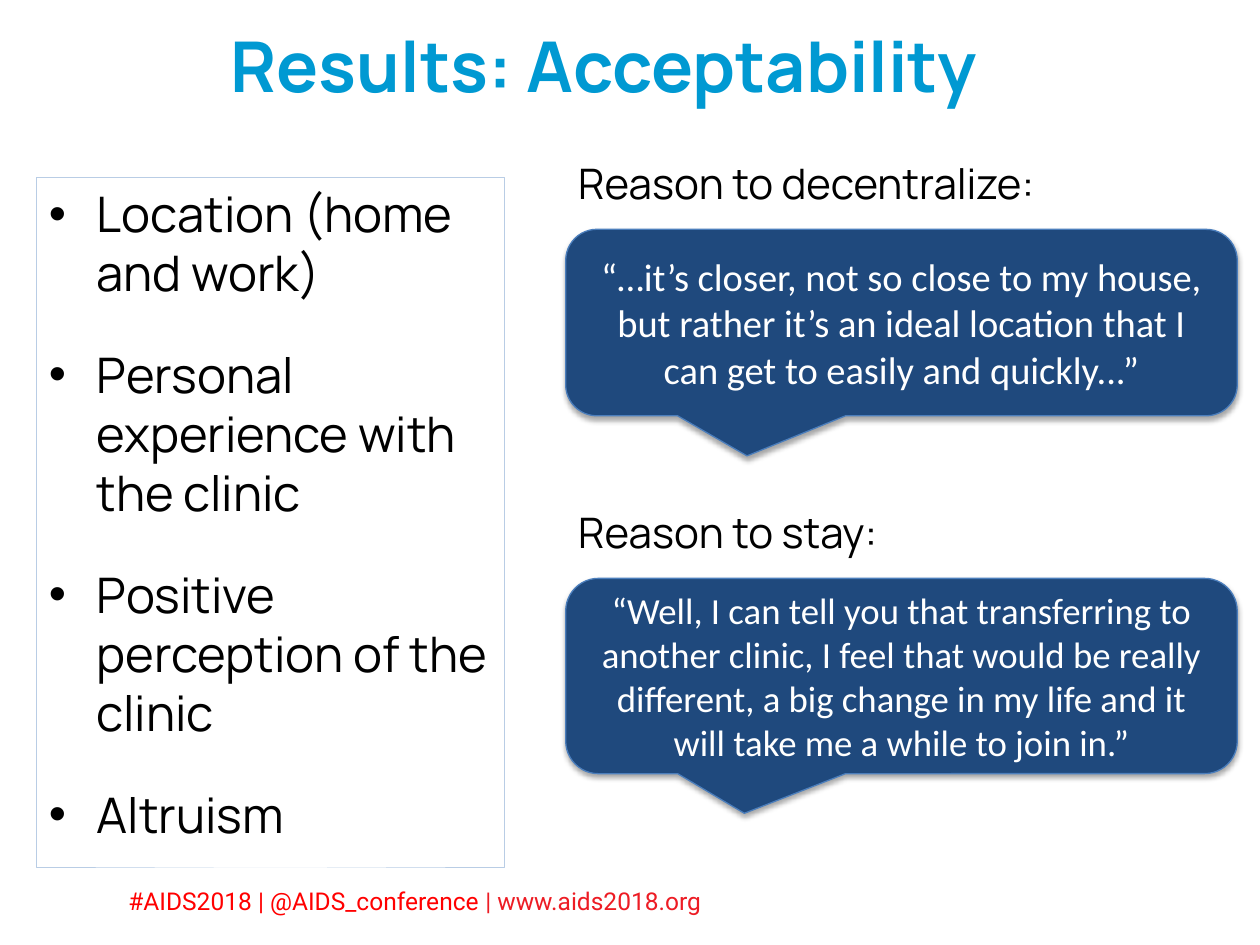
from dataclasses import dataclass

from lxml.etree import SubElement
from pptx import Presentation
from pptx.dml.color import RGBColor
from pptx.enum.shapes import MSO_SHAPE
from pptx.enum.text import MSO_ANCHOR, PP_ALIGN
from pptx.oxml.ns import qn
from pptx.util import Inches, Pt


@dataclass(frozen=True)
class Theme:
    title_color: str = "0099D2"
    text_color: str = "000000"
    quote_color: str = "FFFFFF"
    quote_fill: str = "1F497D"
    quote_line: str = "4B7EBC"
    list_line: str = "B9CDE5"
    footer_color: str = "FF0000"
    link_color: str = "ED1C24"
    main_font: str = "Manrope"
    quote_font: str = "Calibri"
    footer_font: str = "Roboto"
    title_size: int = 40
    list_size: int = 28
    heading_size: int = 24
    footer_size: int = 14


class SlideBuilder:
    def __init__(self, slide, theme):
        self.s = slide
        self.theme = theme

    def style(self, font, color, **formats):
        for name, value in formats.items():
            setattr(font, name, value)
        font.color.rgb = RGBColor.from_string(color)

    def text(self, box, runs, font, size, bold=False,
             align=PP_ALIGN.LEFT, anchor=MSO_ANCHOR.TOP):
        """Add a one-paragraph text box; runs are (text, color) pairs."""
        tf = self.s.shapes.add_textbox(*map(Inches, box)).text_frame
        tf.word_wrap = True
        tf.vertical_anchor = anchor
        p = tf.paragraphs[0]
        p.alignment = align
        for text, color in runs:
            r = p.add_run()
            r.text = text
            self.style(r.font, color, name=font, size=Pt(size), bold=bold)

    def shape(self, kind, box, line, width):
        sp = self.s.shapes.add_shape(kind, *map(Inches, box))
        sp.shadow.inherit = False
        sp.line.color.rgb = RGBColor.from_string(line)
        sp.line.width = Pt(width)
        sp.text_frame.word_wrap = True
        return sp

    def bullet_list(self, box, items):
        t = self.theme
        sp = self.shape(MSO_SHAPE.RECTANGLE, box, t.list_line, 0.25)
        sp.fill.background()
        tf = sp.text_frame
        tf.vertical_anchor = MSO_ANCHOR.TOP
        for i, item in enumerate(items):
            p = tf.add_paragraph() if i else tf.paragraphs[0]
            pPr = p._p.get_or_add_pPr()
            pPr.set("marL", str(Inches(0.38)))
            pPr.set("indent", str(-Inches(0.38)))
            SubElement(pPr, qn("a:buFont"), typeface="Arial")
            SubElement(pPr, qn("a:buChar"), char="•")
            p.alignment = PP_ALIGN.LEFT
            p.space_after = Pt(18)
            if i:
                p.space_before = Pt(6.7)
            r = p.add_run()
            r.text = item
            self.style(r.font, t.text_color, name=t.main_font, size=Pt(t.list_size))

    def soft_shadow(self, sp):
        effects = sp._element.spPr.find(qn("a:effectLst"))
        shadow = SubElement(effects, qn("a:outerShdw"), blurRad=str(Pt(3.1)),
                            dist=str(Pt(1.8)), dir="5400000", rotWithShape="0")
        color = SubElement(shadow, qn("a:srgbClr"), val=self.theme.text_color)
        SubElement(color, qn("a:alpha"), val="35000")

    def quote(self, box, text, size, tail):
        t = self.theme
        sp = self.shape(MSO_SHAPE.ROUNDED_RECTANGULAR_CALLOUT, box, t.quote_line, 0.75)
        for i, value in enumerate((*tail, 0.167)):
            sp.adjustments[i] = value
        sp.fill.solid()
        sp.fill.fore_color.rgb = RGBColor.from_string(t.quote_fill)
        self.soft_shadow(sp)
        tf = sp.text_frame
        tf.vertical_anchor = MSO_ANCHOR.MIDDLE
        p = tf.paragraphs[0]
        p.alignment = PP_ALIGN.CENTER
        r = p.add_run()
        r.text = text
        self.style(r.font, t.quote_color, name=t.quote_font, size=Pt(size))


def main():
    prs = Presentation()
    prs.slide_width, prs.slide_height = Inches(10), Inches(7.5)
    t = Theme()
    b = SlideBuilder(prs.slides.add_slide(prs.slide_layouts[6]), t)

    b.text((0.92, 6.98, 7.35, 0.34),
           [("#AIDS2018 | @AIDS_conference ", t.footer_color),
            ("|\u00a0www.aids2018.org".replace("\u00a0", " "), t.link_color)],
           t.footer_font, t.footer_size)
    b.text((0.47, 0.07, 8.64, 0.88), [("Results: Acceptability", t.title_color)],
           t.main_font, t.title_size, bold=True,
           align=PP_ALIGN.CENTER, anchor=MSO_ANCHOR.MIDDLE)
    b.bullet_list((0.29, 1.41, 3.71, 5.47),
                  ["Location (home and work)",
                   "Personal experience with the clinic",
                   "Positive perception of the clinic",
                   "Altruism"])

    reasons = [
        ("Reason to decentralize:", 1.2, 1.48, 22, (-0.23, 0.715),
         "“…it’s closer, not so close to my house, but rather it’s an ideal "
         "location that I can get to easily and quickly...”"),
        ("Reason to stay:", 3.97, 1.55, 21, (-0.234, 0.703),
         "“Well, I can tell you that transferring to another clinic, I feel that "
         "would be really different, a big change in my life and it will take me "
         "a while to join in.”"),
    ]
    left, heading_height = 4.49, 0.62
    for heading, top, height, size, tail, words in reasons:
        b.text((left, top, 3.9, heading_height), [(heading, t.text_color)],
               t.main_font, t.heading_size)
        b.quote((left, top + heading_height, 5.33, height), words, size, tail)

    prs.save("out.pptx")


if __name__ == "__main__":
    main()
